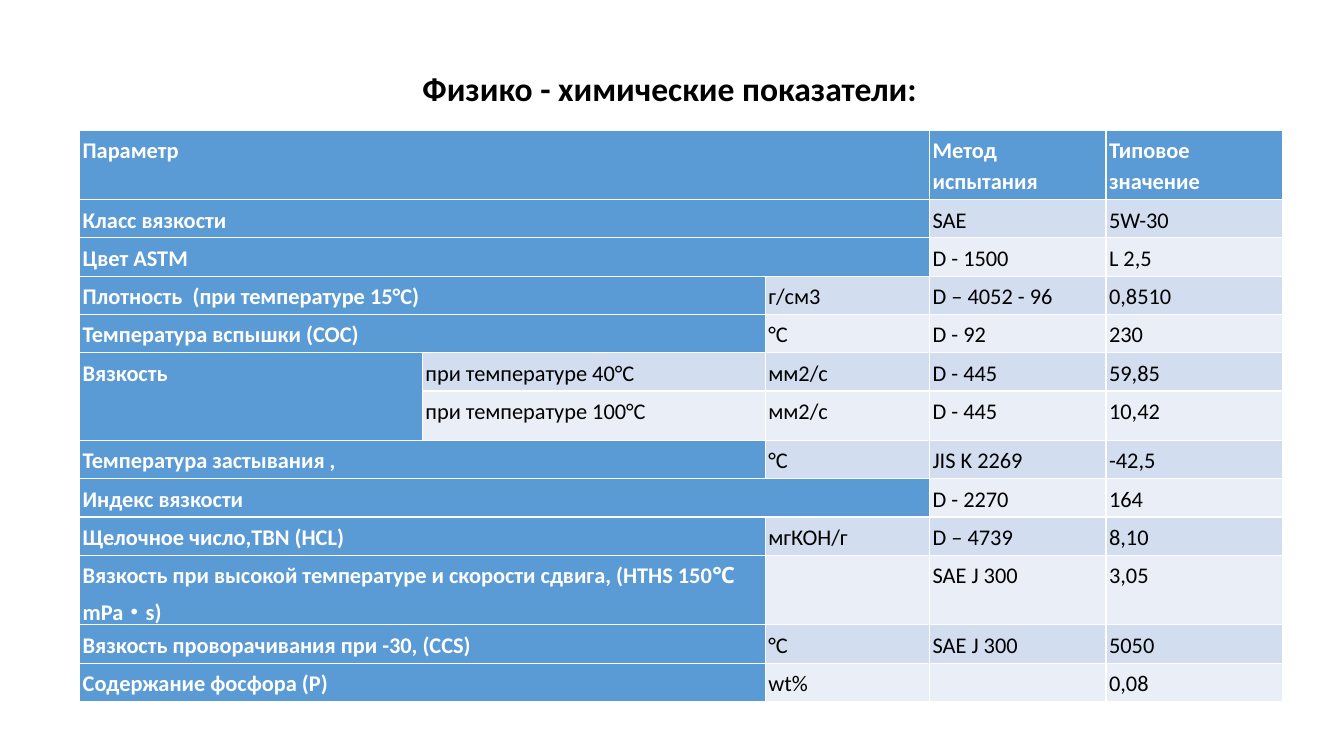
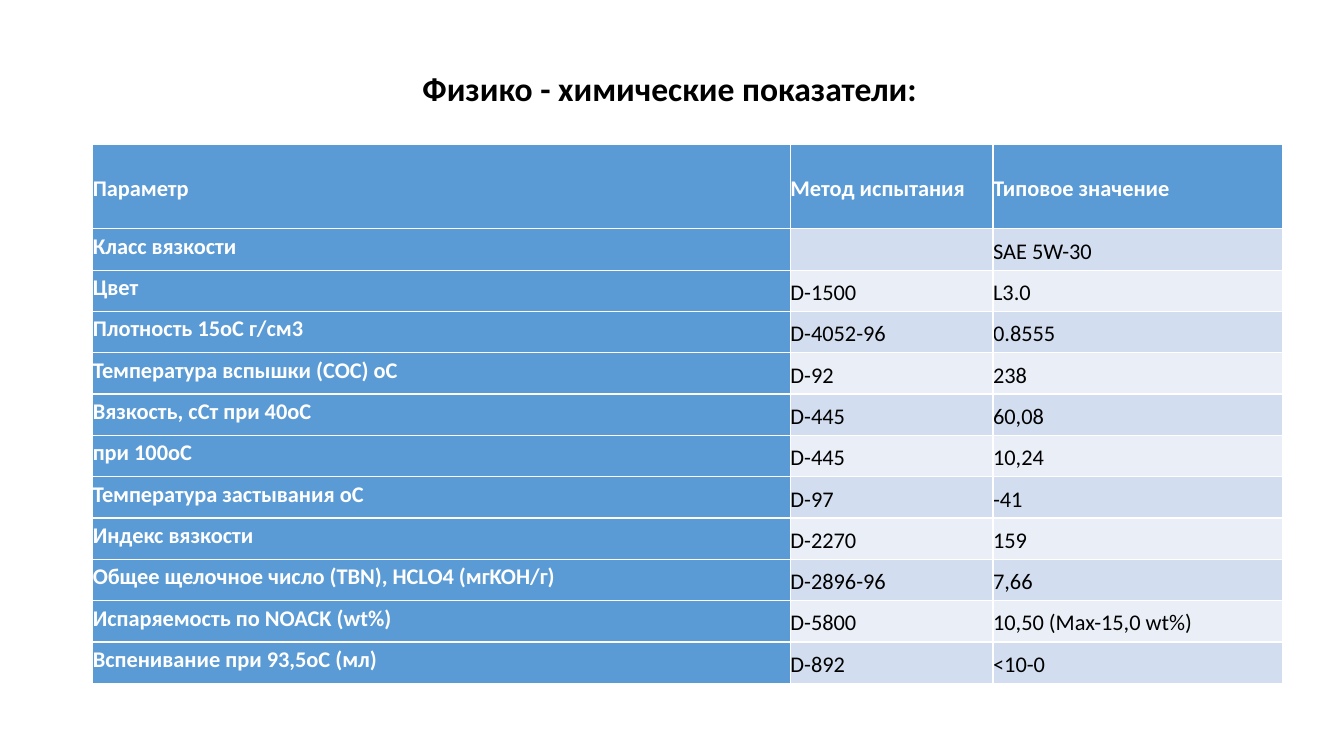
from dataclasses import dataclass
from itertools import takewhile

from pptx import Presentation
from pptx.dml.color import RGBColor
from pptx.enum.text import MSO_ANCHOR as Anchor, MSO_AUTO_SIZE as AutoSize, PP_ALIGN as Align
from pptx.util import Pt

EMU_PER_PX = 9144
SLIDE_SIZE = (1333, 750)
TITLE = "Физико - химические показатели:"
TITLE_BOX = (409, 62, 515, 50)
TITLE_ONLY = 5


@dataclass(frozen=True)
class Theme:
    """Colours, font and type sizes shared by the slides."""
    font: str = "Calibri"
    title_size: int = 24
    table_size: int = 16
    ink: str = "000000"
    paper: str = "FFFFFF"
    label: str = "5B9BD5"
    bands: tuple = ("EAEFF7", "D2DEEF")


THEME = Theme()

DETAILED = {
    "origin": (79, 129),
    "columns": (340, 340, 163, 175, 175),
    "heights": (69, *[38] * 5, 49, *[38] * 3, 69, 38, 38),
    "inset": 3,
    "value_anchor": Anchor.TOP,
    "rows": (
        ("Параметр", None, None, "Метод испытания", "Типовое значение"),
        ("Класс вязкости", None, None, "SAE", "5W-30"),
        ("Цвет ASTM", None, None, "D - 1500", "L 2,5"),
        ("Плотность  (при температуре 15°C)", None, "г/см3", "D – 4052 - 96", "0,8510"),
        ("Температура вспышки (COC)", None, "°C", "D - 92", "230"),
        ("Вязкость", "при температуре 40°C", "мм2/с", "D - 445", "59,85"),
        (None, "при температуре 100°C", "мм2/с", "D - 445", "10,42"),
        ("Температура застывания ,", None, "°C", "JIS K 2269", "-42,5"),
        ("Индекс вязкости", None, None, "D - 2270", "164"),
        ("Щелочное число,TBN (HCL)", None, "мгКОН/г", "D – 4739", "8,10"),
        ("Вязкость при высокой температуре и скорости сдвига, (HTHS 150℃ mPa・s)",
         None, "", "SAE J 300", "3,05"),
        ("Вязкость проворачивания при -30, (CCS)", None, "°C", "SAE J 300", "5050"),
        ("Содержание фосфора (P)", None, "wt%", "", "0,08"),
    ),
}

COMPACT = {
    "origin": (92, 143),
    "columns": (692, 201, 287),
    "heights": (84, *[41] * 11),
    "inset": 0,
    "value_anchor": Anchor.MIDDLE,
    "rows": (
        ("Параметр", "Метод испытания", "Типовое значение"),
        ("Класс вязкости", "", "SAE 5W-30"),
        ("Цвет", "D-1500", "L3.0"),
        ("Плотность 15оС г/см3", "D-4052-96", "0.8555"),
        ("Температура вспышки (COC) оС", "D-92", "238"),
        ("Вязкость, сСт при 40оС", "D-445", "60,08"),
        ("при 100оС", "D-445", "10,24"),
        ("Температура застывания оС", "D-97", "-41"),
        ("Индекс вязкости", "D-2270", "159"),
        ("Общее щелочное число (TBN), HCLO4 (мгKOH/г)", "D-2896-96", "7,66"),
        ("Испаряемость по NOACK (wt%)", "D-5800", "10,50 (Max-15,0 wt%)"),
        ("Вспенивание при 93,5оС (мл)", "D-892", "<10-0"),
    ),
}


def px(length):
    """Turn px into EMU."""
    return length * EMU_PER_PX


def assign(target, values):
    """Set each named attribute of the target."""
    for name, value in values.items():
        setattr(target, name, value)


def write(paragraph, text, size, colour, bold):
    """Add one formatted run to a paragraph."""
    run = paragraph.add_run()
    run.text = text
    assign(run.font, {"name": THEME.font, "size": Pt(size), "bold": bold})
    run.font.color.rgb = RGBColor.from_string(colour)


def place_title(slide, box):
    """Move and format the title placeholder."""
    title = slide.shapes.title
    assign(title, dict(zip(("left", "top", "width", "height"), map(px, box))))
    frame = title.text_frame
    assign(frame, {"word_wrap": False, "auto_size": AutoSize.SHAPE_TO_FIT_TEXT,
                   "vertical_anchor": Anchor.TOP})
    heading = frame.paragraphs[0]
    heading.alignment = Align.LEFT
    write(heading, TITLE, THEME.title_size, THEME.ink, True)


def fill_cell(cell, text, is_label, band, anchor, inset):
    """Colour one cell and write its text."""
    cell.fill.solid()
    cell.fill.fore_color.rgb = RGBColor.from_string(THEME.label if is_label else band)
    assign(cell, {f"margin_{side}": px(inset) for side in ("left", "top", "right", "bottom")})
    cell.vertical_anchor = anchor
    if text:
        line = cell.text_frame.paragraphs[0]
        assign(line, {"line_spacing": 1.15, "space_after": Pt(10)})
        write(line, text, THEME.table_size, THEME.paper if is_label else THEME.ink, is_label)


def place_table(slide, origin, columns, heights, inset, value_anchor, rows):
    """Build a property table; None joins a cell to its left, or above in column one."""
    box = (*origin, sum(columns), sum(heights))
    table = slide.shapes.add_table(len(rows), len(columns), *map(px, box)).table
    table.first_col = True
    for column, width in zip(table.columns, columns):
        column.width = px(width)
    for table_row, height in zip(table.rows, heights):
        table_row.height = px(height)
    for r, row in enumerate(rows):
        for c, text in enumerate(row):
            if text is None:
                if c == 0:
                    table.cell(r - 1, 0).merge(table.cell(r, 0))
                continue
            joined = len(list(takewhile(lambda value: value is None, row[c + 1:])))
            cell = table.cell(r, c)
            if joined:
                cell.merge(table.cell(r, c + joined))
            anchor = Anchor.TOP if c == 0 and r > 0 else value_anchor
            fill_cell(cell, text, r == 0 or c == 0, THEME.bands[r % 2], anchor, inset)


def add_property_slide(deck, properties):
    """Add a slide with the shared title and one property table."""
    slide = deck.slides.add_slide(deck.slide_layouts[TITLE_ONLY])
    place_title(slide, TITLE_BOX)
    place_table(slide, **properties)


def main():
    """Build and save the deck."""
    deck = Presentation()
    deck.slide_width, deck.slide_height = map(px, SLIDE_SIZE)
    for properties in (DETAILED, COMPACT):
        add_property_slide(deck, properties)
    deck.save("out.pptx")


if __name__ == "__main__":
    main()
